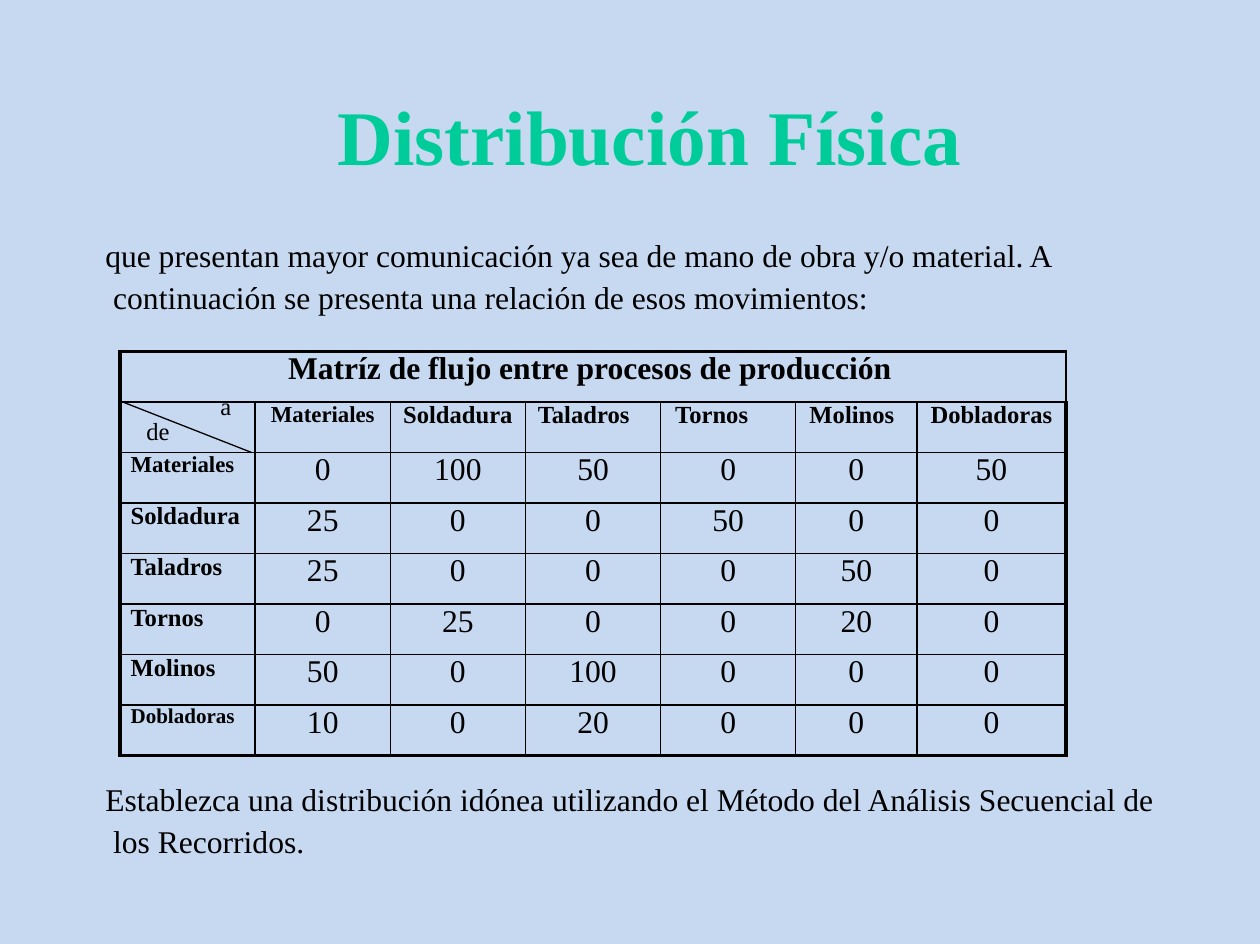
from dataclasses import dataclass

from lxml import etree
from pptx import Presentation
from pptx import util as u
from pptx.dml.color import RGBColor
from pptx.enum import shapes, text
from pptx.oxml.ns import qn

Pt = u.Pt
LEFT, CENTER, RIGHT = text.PP_ALIGN.LEFT, text.PP_ALIGN.CENTER, text.PP_ALIGN.RIGHT


@dataclass(frozen=True)
class Theme:
    font: str = "Times New Roman"
    background: str = "C6D9F1"
    accent: str = "00CC9A"
    ink: str = "000000"
    title: float = 44
    body: float = 18
    label: float = 14
    label_small: float = 13
    label_tiny: float = 12
    outer: float = 2.25
    inner: float = 1
    diagonal: float = 0.75


THEME = Theme()
PROCESSES = ["Materiales", "Soldadura", "Taladros", "Tornos", "Molinos", "Dobladoras"]
FLOWS = [
    [0, 100, 50, 0, 0, 50],
    [25, 0, 0, 50, 0, 0],
    [25, 0, 0, 0, 50, 0],
    [0, 25, 0, 0, 20, 0],
    [50, 0, 100, 0, 0, 0],
    [10, 0, 20, 0, 0, 0],
]
COLUMN_SIZES = {"Materiales": THEME.label_small}
ROW_SIZES = {"Materiales": THEME.label_small, "Dobladoras": THEME.label_tiny}
COLUMN_LAYOUTS = {
    "Taladros": dict(align=LEFT, indent_left=7),
    "Tornos": dict(align=LEFT, indent_left=8.3),
    "Molinos": dict(align=CENTER, indent_right=5),
}
MATRIX_LEFT, MATRIX_TOP, ROW_HEIGHT = 68.4, 200.2, 28.8
COLUMN_WIDTHS = [77, 77, 77, 77, 77, 69, 85]


def write(paragraph, wording, size, bold=False, color=THEME.ink, align=LEFT,
          indent_left=0, indent_right=0, hanging=0, before=0, spacing=None):
    paragraph.alignment = align
    paragraph.space_before = Pt(before)
    if spacing:
        paragraph.line_spacing = spacing
    properties = paragraph._p.get_or_add_pPr()
    for name, length in (("marL", indent_left), ("marR", indent_right),
                         ("indent", -hanging)):
        properties.set(name, str(int(Pt(length))))
    run = paragraph.add_run()
    run.text = wording
    run.font.name = THEME.font
    run.font.size = Pt(size)
    run.font.bold = bold
    run.font.color.rgb = RGBColor.from_string(color)


def add_text(slide, left, top, width, height, wording, size, inset_top=0, **style):
    frame = slide.shapes.add_textbox(Pt(left), Pt(top), Pt(width), Pt(height)).text_frame
    frame.word_wrap = True
    frame.margin_left = frame.margin_right = frame.margin_bottom = 0
    frame.margin_top = Pt(inset_top)
    write(frame.paragraphs[0], wording, size, **style)


def set_borders(cell, widths):
    cell.fill.background()
    properties = cell._tc.get_or_add_tcPr()
    for position, (side, width) in enumerate(widths.items()):
        border = etree.Element(qn(f"a:ln{side}"), w=str(int(Pt(width))))
        fill = etree.SubElement(border, qn("a:solidFill"))
        etree.SubElement(fill, qn("a:srgbClr"), val=THEME.ink)
        properties.insert(position, border)


def fill_corner(cell):
    write(cell.text_frame.paragraphs[0], "a", THEME.label,
          align=RIGHT, indent_right=13.7, spacing=Pt(10.6))
    write(cell.text_frame.add_paragraph(), "de", THEME.label,
          indent_left=15, spacing=Pt(14.1))


def add_matrix(slide):
    row_count, column_count = len(PROCESSES) + 2, len(PROCESSES) + 1
    matrix = slide.shapes.add_table(
        row_count, column_count, Pt(MATRIX_LEFT), Pt(MATRIX_TOP),
        Pt(sum(COLUMN_WIDTHS)), Pt(ROW_HEIGHT * row_count)).table
    matrix.first_row = matrix.horz_banding = False
    for column, width in zip(matrix.columns, COLUMN_WIDTHS):
        column.width = Pt(width)
    for r, row in enumerate(matrix.rows):
        row.height = Pt(ROW_HEIGHT)
        for c, cell in enumerate(row.cells):
            cell.margin_left = cell.margin_right = 0
            cell.margin_top = cell.margin_bottom = 0
            edges = {"L": c == 0, "R": c == column_count - 1,
                     "T": r == 0, "B": r == row_count - 1}
            set_borders(cell, {side: THEME.outer if edge else THEME.inner
                               for side, edge in edges.items()})

    def write_cell(r, c, wording, size, **style):
        write(matrix.cell(r, c).text_frame.paragraphs[0], wording, size, **style)

    matrix.cell(0, 0).merge(matrix.cell(0, column_count - 1))
    write_cell(0, 0, "Matríz de flujo entre procesos de producción", THEME.body,
               bold=True, indent_left=95.7, before=1.9)
    fill_corner(matrix.cell(1, 0))
    for i, (process, flows) in enumerate(zip(PROCESSES, FLOWS), 1):
        write_cell(1, i, process, COLUMN_SIZES.get(process, THEME.label), bold=True,
                   before=2.6, **COLUMN_LAYOUTS.get(process, dict(align=CENTER)))
        write_cell(i + 1, 0, process, ROW_SIZES.get(process, THEME.label), bold=True,
                   indent_left=6, before=2.6)
        for c, flow in enumerate(flows, 1):
            write_cell(i + 1, c, str(flow), THEME.body, align=CENTER, before=2.5)


def add_line(slide, x1, y1, x2, y2):
    line = slide.shapes.add_connector(
        shapes.MSO_CONNECTOR.STRAIGHT, Pt(x1), Pt(y1), Pt(x2), Pt(y2))
    line.line.color.rgb = RGBColor.from_string(THEME.ink)
    line.line.width = Pt(THEME.diagonal)
    etree.SubElement(line._element.spPr, qn("a:effectLst"))


def main():
    deck = Presentation()
    deck.slide_width, deck.slide_height = Pt(717.84), Pt(537.84)
    slide = deck.slides.add_slide(deck.slide_layouts[6])
    slide.background.fill.solid()
    slide.background.fill.fore_color.rgb = RGBColor.from_string(THEME.background)

    add_text(slide, 53.3, 28.8, 612, 90, "Distribución Física", THEME.title,
             inset_top=21.4, bold=True, color=THEME.accent, indent_left=139)
    body = dict(indent_left=5.5, hanging=4.5, spacing=1.11)
    add_text(slide, 59, 131.8, 544, 47.5,
             "que presentan mayor comunicación ya sea de mano de obra y/o material. "
             "A continuación se presenta una relación de esos movimientos:",
             THEME.body, **body)
    add_matrix(slide)
    add_line(slide, 69.8, 229, 143.3, 257.8)
    add_text(slide, 59, 442, 602, 49,
             "Establezca una distribución idónea utilizando el Método del "
             "Análisis Secuencial de los Recorridos.", THEME.body, **body)
    deck.save("out.pptx")


if __name__ == "__main__":
    main()
